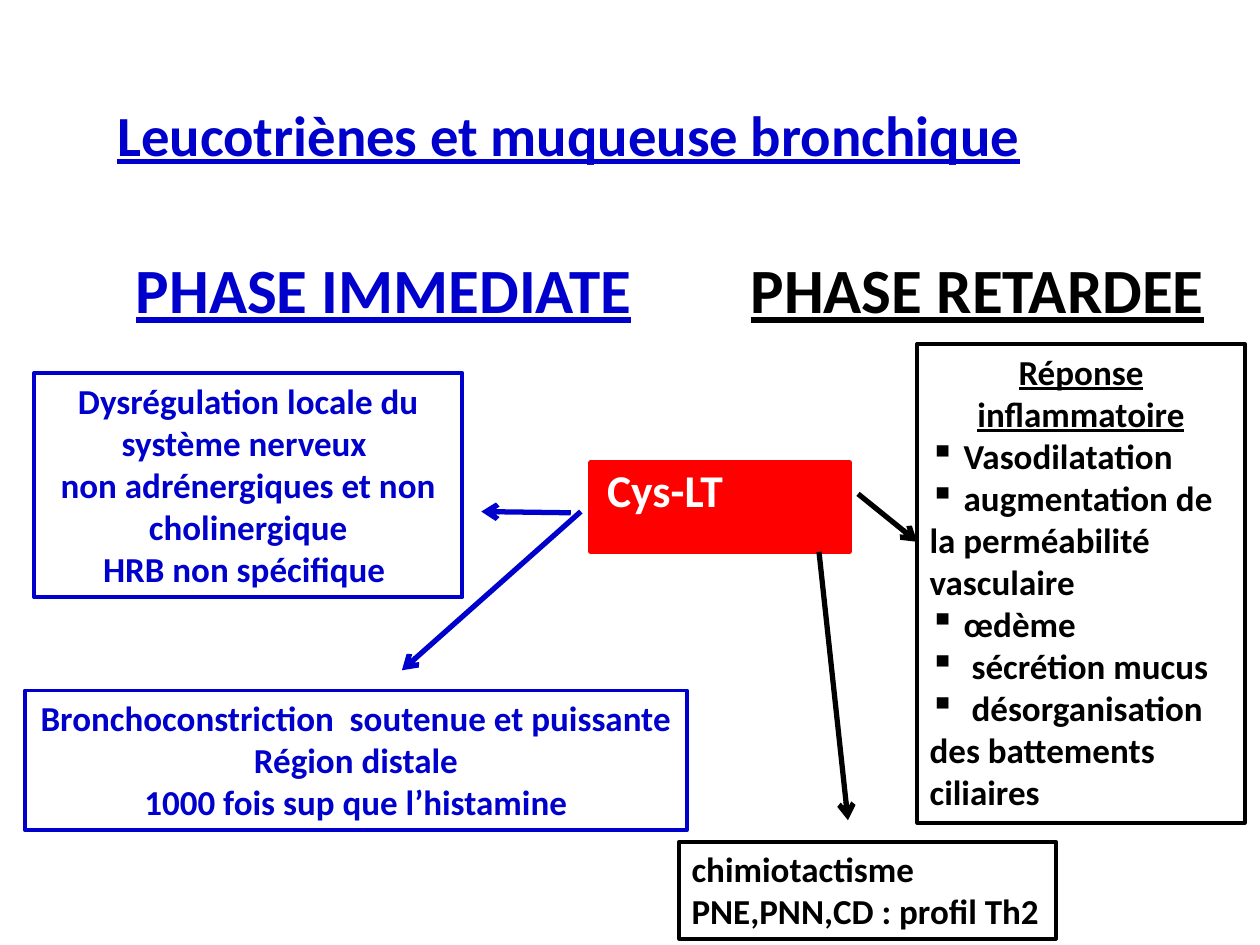
from dataclasses import dataclass
from lxml.etree import SubElement
from pptx import Presentation
from pptx.dml.color import RGBColor
from pptx.enum.shapes import MSO_CONNECTOR, MSO_SHAPE
from pptx.enum.text import MSO_ANCHOR, PP_ALIGN
from pptx.oxml.ns import qn
from pptx.util import Inches, Pt


@dataclass(frozen=True)
class Theme:
    font: str = "Calibri"
    blue: str = "0000CC"
    black: str = "000000"
    red: str = "FF0000"
    white: str = "FFFFFF"
    title: float = 32.4
    phase: float = 36
    label: float = 26
    body: float = 20
    frame: float = 2.25
    arrow: float = 3


THEME = Theme()
LEFT, MID = PP_ALIGN.LEFT, PP_ALIGN.CENTER


def apply(target, values):
    for name, value in values.items():
        setattr(target, name, value)


def place(shape, box):
    names = ("left", "top", "width", "height")
    apply(shape, {name: Inches(n) for name, n in zip(names, box)})


def write(para, text, size, color, align=LEFT, line=False):
    para.alignment = align
    run = para.add_run()
    run.text = text
    apply(run.font, {"name": THEME.font, "size": Pt(size),
                     "bold": True, "underline": line})
    run.font.color.rgb = RGBColor.from_string(color)


def fill_text(frame, lines, size, color, align=LEFT, line=False):
    for i, text in enumerate(lines):
        para = frame.add_paragraph() if i else frame.paragraphs[0]
        write(para, text, size, color, align, line)


def add_title(slide, text):
    title = slide.shapes.title
    place(title, (0.83, 0.28, 8.5, 1.1))
    apply(title.text_frame, {"vertical_anchor": MSO_ANCHOR.BOTTOM,
                             "word_wrap": True})
    fill_text(title.text_frame, [text], THEME.title, THEME.blue, line=True)


def add_head(slide, box, text, color):
    head = slide.shapes.add_textbox(*map(Inches, box))
    head.text_frame.word_wrap = False
    fill_text(head.text_frame, [text], THEME.phase, color, line=True)


def add_box(slide, box, color, width=THEME.frame, fill=None, wrap=True):
    """Add a framed rectangle and return its text frame."""
    shape = slide.shapes.add_shape(MSO_SHAPE.RECTANGLE, *map(Inches, box))
    shape.shadow.inherit = False
    if fill:
        shape.fill.solid()
        shape.fill.fore_color.rgb = RGBColor.from_string(fill)
    else:
        shape.fill.background()
    shape.line.color.rgb = RGBColor.from_string(color)
    shape.line.width = Pt(width)
    frame = shape.text_frame
    apply(frame, {"word_wrap": wrap, "vertical_anchor": MSO_ANCHOR.TOP})
    return frame


def add_core(slide, text):
    frame = add_box(slide, (4.69, 3.67, 2.05, 0.71), THEME.red,
                    THEME.arrow, THEME.red)
    frame.margin_top = 0
    para = frame.paragraphs[0]
    write(para, text, THEME.label, THEME.white)
    para.space_before = Pt(6)
    para._p.get_or_add_pPr().set("marL", str(Inches(0.03)))


def add_list(frame, items, color):
    for text in items:
        para = frame.add_paragraph()
        write(para, text, THEME.body, color)
        props = para._p.get_or_add_pPr()
        SubElement(props, qn("a:buChar")).set("char", "▪")


def add_arrow(slide, start, end, color):
    arrow = slide.shapes.add_connector(
        MSO_CONNECTOR.STRAIGHT, *map(Inches, start + end))
    arrow.line.color.rgb = RGBColor.from_string(color)
    arrow.line.width = Pt(THEME.arrow)
    SubElement(arrow.line._get_or_add_ln(), qn("a:tailEnd")).set("type", "arrow")
    SubElement(arrow._element.spPr, qn("a:effectLst"))


def main():
    deck = Presentation()
    apply(deck, {"slide_width": Inches(10), "slide_height": Inches(7.5)})
    slide = deck.slides.add_slide(deck.slide_layouts[5])
    blue, black, body = THEME.blue, THEME.black, THEME.body

    add_title(slide, "Leucotriènes et muqueuse bronchique")
    add_head(slide, (0.98, 1.94, 4.18, 0.71), "PHASE IMMEDIATE", blue)
    add_head(slide, (5.86, 1.94, 3.84, 0.71), "PHASE RETARDEE", black)
    add_core(slide, "Cys-LT")

    spasm = add_box(slide, (0.2, 5.48, 5.25, 1.11), blue, wrap=False)
    fill_text(spasm, ["Bronchoconstriction  soutenue et puissante",
                      "Région distale",
                      "1000 fois sup que l’histamine"], body, blue, MID)
    nerve = add_box(slide, (0.27, 2.96, 3.4, 1.78), blue)
    fill_text(nerve, ["Dysrégulation locale du système nerveux ",
                      "non adrénergiques et non cholinergique",
                      "HRB non spécifique "], body, blue, MID)
    reply = add_box(slide, (7.28, 2.73, 2.6, 3.8), black)
    fill_text(reply, ["Réponse inflammatoire"], body, black, MID, True)
    add_list(reply, [" Vasodilatation",
                     " augmentation de la perméabilité vasculaire",
                     " œdème",
                     "  sécrétion mucus",
                     "  désorganisation des battements ciliaires"], black)
    cells = add_box(slide, (5.39, 6.68, 2.99, 0.77), black)
    fill_text(cells, ["chimiotactisme PNE,PNN,CD : profil Th2"], body, black)

    for start, end, color in (((4.61, 4.06), (3.19, 5.32), blue),
                              ((4.53, 4.07), (3.82, 4.06), blue),
                              ((6.81, 3.92), (7.28, 4.3), black),
                              ((6.5, 4.38), (6.73, 6.51), black)):
        add_arrow(slide, start, end, color)
    deck.save("out.pptx")


if __name__ == "__main__":
    main()
